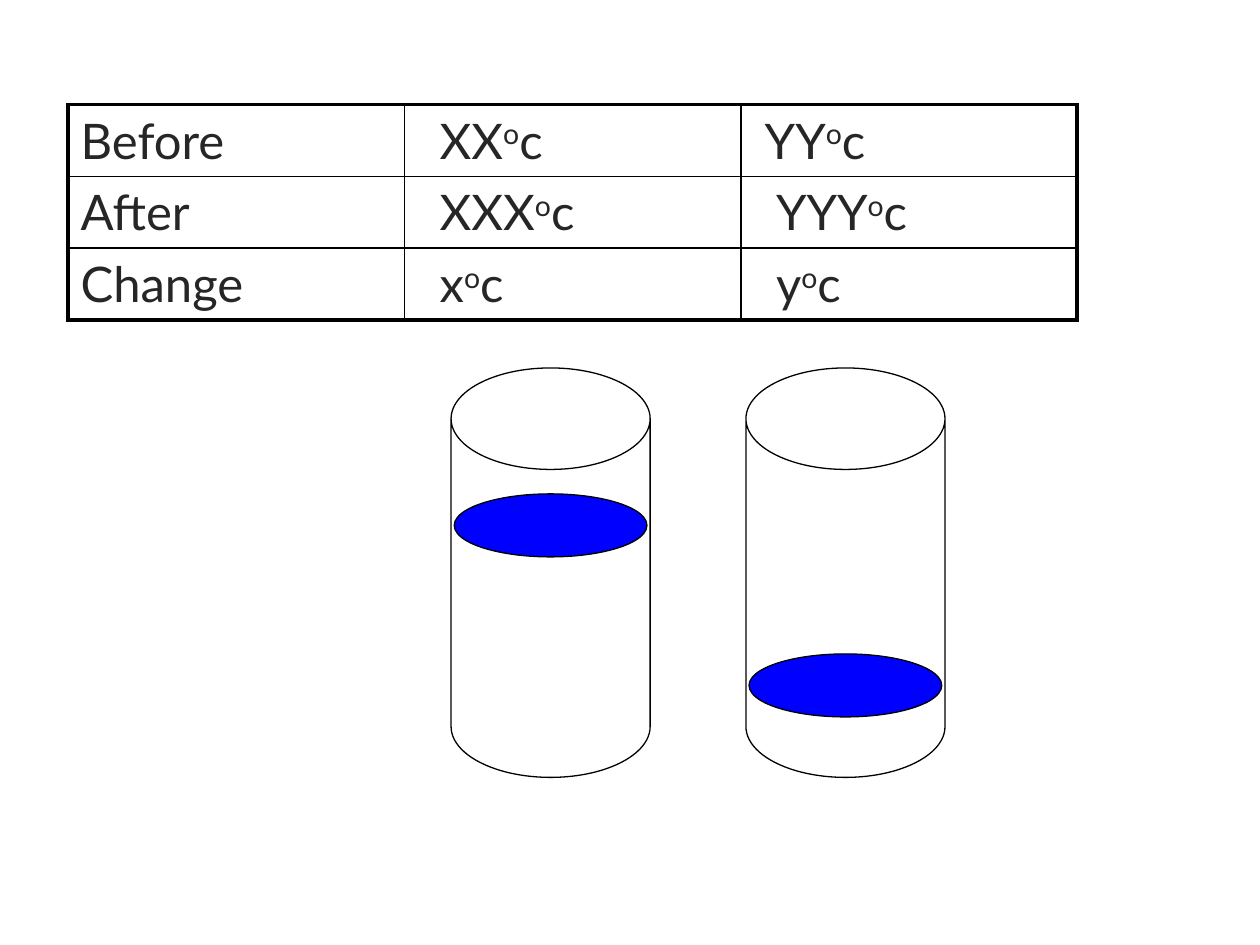
import pptx
import pptx.util
import pptx.dml.color
import pptx.enum.shapes
import pptx.oxml.ns
from lxml import etree
from pptx.util import Inches, Pt

COLORS = {"line": "000000", "water": "0000FF", "text": "262626"}
FONT = "Lato"

# Each cell: (left margin in inches, reading, unit shown as degrees c or not)
ROWS = [
    [(0.1, "Before", False), (0.28, "XX", True), (0.19, "YY", True)],
    [(0.1, "After", False), (0.28, "XXX", True), (0.28, "YYY", True)],
    [(0.1, "Change", False), (0.28, "x", True), (0.28, "y", True)],
]
TABLE_LEFT, TABLE_TOP, COLUMN_WIDTH, ROW_HEIGHT = 0.54, 0.83, 2.67, 0.57
OUTER, INNER = 2.25, 1

# Each beaker: (left, top of the water surface)
BEAKERS = [(3.58, 3.92), (5.92, 5.19)]
BEAKER_TOP, BEAKER_WIDTH, BEAKER_HEIGHT = 2.92, 1.58, 3.25
WATER_WIDTH, WATER_HEIGHT = 1.53, 0.5


def color(name):
    return pptx.dml.color.RGBColor.from_string(COLORS[name])


def add_outline(slide, kind, left, top, width, height):
    shape = slide.shapes.add_shape(
        kind, Inches(left), Inches(top), Inches(width), Inches(height))
    shape.shadow.inherit = False
    shape.fill.background()
    shape.line.color.rgb = color("line")
    shape.line.width = Pt(0.75)
    return shape


def set_borders(cell, widths):
    properties = cell._tc.get_or_add_tcPr()
    for index, (side, width) in enumerate(widths.items()):
        line = etree.Element(pptx.oxml.ns.qn("a:ln" + side), w=str(Pt(width)))
        fill = etree.SubElement(line, pptx.oxml.ns.qn("a:solidFill"))
        etree.SubElement(fill, pptx.oxml.ns.qn("a:srgbClr"), val=COLORS["line"])
        properties.insert(index, line)


def fill_cell(cell, margin, reading, has_unit):
    cell.fill.background()
    cell.margin_left = Inches(margin)
    para = cell.text_frame.paragraphs[0]
    for text in [reading, "o", "c"] if has_unit else [reading]:
        span = para.add_run()
        span.text = text
        span.font.name = FONT
        span.font.size = Pt(28)
        span.font.color.rgb = color("text")
        if text == "o":
            span.font._element.set("baseline", "30000")


deck = pptx.Presentation()
deck.slide_width, deck.slide_height = Inches(10), Inches(7.5)
page = deck.slides.add_slide(deck.slide_layouts[6])

# Beakers, then the water surface centred in each
shapes = pptx.enum.shapes.MSO_SHAPE
for left, water_top in BEAKERS:
    beaker = add_outline(page, shapes.CAN, left, BEAKER_TOP, BEAKER_WIDTH, BEAKER_HEIGHT)
    beaker.adjustments[0] = 0.51
    water_left = left + (BEAKER_WIDTH - WATER_WIDTH) / 2
    water = add_outline(page, shapes.OVAL, water_left, water_top, WATER_WIDTH, WATER_HEIGHT)
    water.fill.solid()
    water.fill.fore_color.rgb = color("water")

# Temperature table with a heavy outer frame
row_count, column_count = len(ROWS), len(ROWS[0])
table = page.shapes.add_table(
    row_count, column_count, Inches(TABLE_LEFT), Inches(TABLE_TOP),
    Inches(COLUMN_WIDTH * column_count), Inches(ROW_HEIGHT * row_count)).table
table.first_row = table.horz_banding = False
for column in table.columns:
    column.width = Inches(COLUMN_WIDTH)
for r, row in enumerate(ROWS):
    table.rows[r].height = Inches(ROW_HEIGHT)
    for c, content in enumerate(row):
        cell = table.cell(r, c)
        fill_cell(cell, *content)
        set_borders(cell, {
            "L": OUTER if c == 0 else INNER,
            "R": OUTER if c == column_count - 1 else INNER,
            "T": OUTER if r == 0 else INNER,
            "B": OUTER if r == row_count - 1 else INNER,
        })

deck.save("out.pptx")
